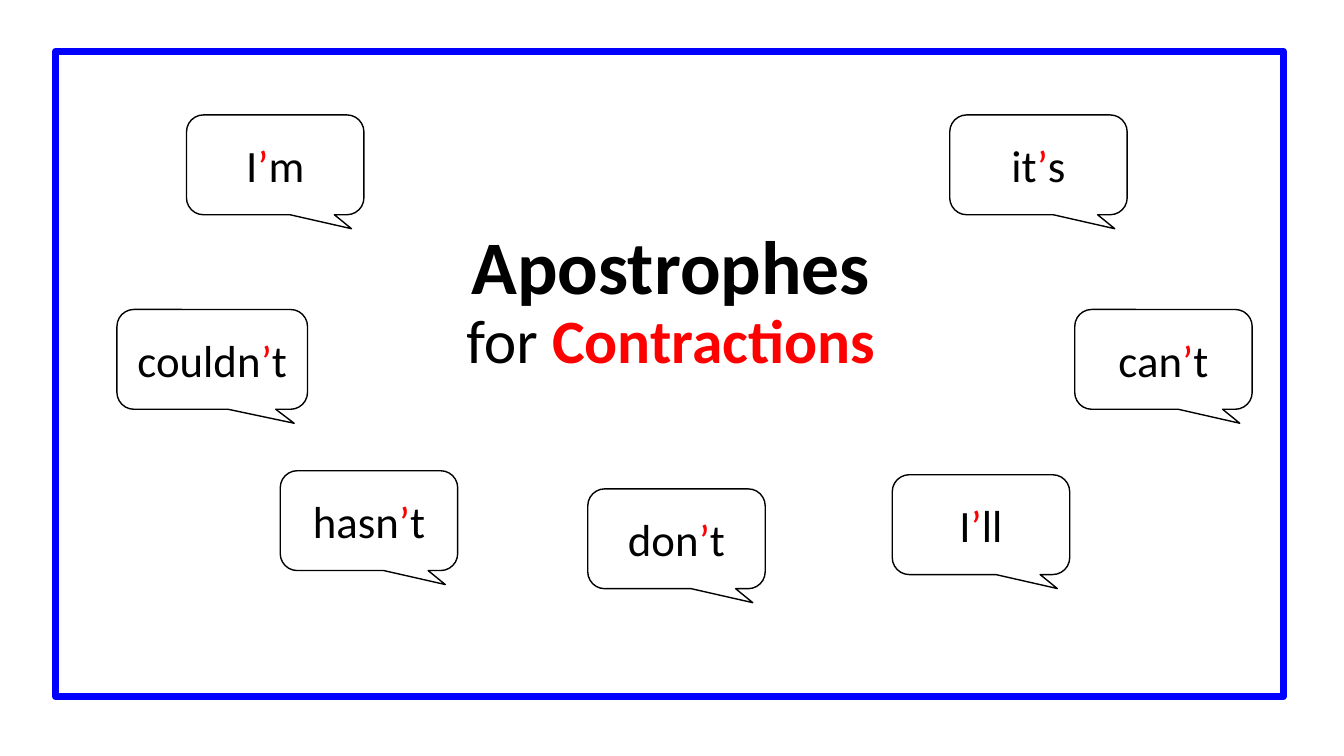
from pptx import Presentation
from pptx.dml.color import RGBColor
from pptx.enum.shapes import MSO_SHAPE
from pptx.enum.text import MSO_ANCHOR, MSO_AUTO_SIZE, PP_ALIGN
from pptx.util import Emu, Pt

PX = 9144
FONT = "Calibri"
COLORS = {"text": "000000", "accent": "FF0000", "frame": "0000FF"}
RECT = MSO_SHAPE.RECTANGLE
BUBBLE = MSO_SHAPE.ROUNDED_RECTANGULAR_CALLOUT
CENTER = PP_ALIGN.CENTER
MIDDLE = MSO_ANCHOR.MIDDLE
BOTTOM = MSO_ANCHOR.BOTTOM
NO_AUTOFIT = MSO_AUTO_SIZE.NONE

BUBBLE_W, BUBBLE_H = 176, 99
BUBBLE_ADJUSTMENTS = (0.43, 0.64, 0.17)
CONTRACTIONS = [
    ("it’s", 942, 114, BUBBLE_W),
    ("can’t", 1066, 307, BUBBLE_W),
    ("I’ll", 885, 471, BUBBLE_W),
    ("don’t", 583, 485, BUBBLE_W),
    ("hasn’t", 278, 467, BUBBLE_W),
    ("couldn’t", 116, 307, 189),
    ("I’m", 185, 114, BUBBLE_W),
]


def px(n):
    return Emu(n * PX)


def rgb(name):
    return RGBColor.from_string(COLORS[name])


def add_text(p, text, size, color="text", bold=False):
    r = p.add_run()
    r.text = text
    r.font.name = FONT
    r.font.size = Pt(size)
    r.font.bold = bold
    r.font.color.rgb = rgb(color)


def add_outline(slide, kind, box, color, weight):
    sp = slide.shapes.add_shape(kind, *map(px, box))
    sp.shadow.inherit = False
    sp.fill.background()
    sp.line.color.rgb = rgb(color)
    sp.line.width = Pt(weight)
    return sp


def add_title(slide, box):
    title = slide.shapes.title
    title.left, title.top, title.width, title.height = map(px, box)
    tf = title.text_frame
    tf.word_wrap = True
    tf.auto_size = NO_AUTOFIT
    tf.vertical_anchor = BOTTOM
    p = tf.paragraphs[0]
    p.alignment = CENTER
    p.line_spacing = 0.9
    add_text(p, "Apostrophes", 54, bold=True)
    p.add_line_break()
    add_text(p, "for ", 44)
    add_text(p, "Contractions", 44, color="accent", bold=True)


def add_bubble(slide, word, box):
    sp = add_outline(slide, BUBBLE, box, "text", 1)
    for i, value in enumerate(BUBBLE_ADJUSTMENTS):
        sp.adjustments[i] = value
    tf = sp.text_frame
    tf.word_wrap = True
    tf.vertical_anchor = MIDDLE
    p = tf.paragraphs[0]
    p.alignment = CENTER
    for part in word.partition("’"):
        add_text(p, part, 32, color="accent" if part == "’" else "text")


def main():
    prs = Presentation()
    prs.slide_width, prs.slide_height = px(1333), px(750)
    slide = prs.slides.add_slide(prs.slide_layouts[5])
    add_title(slide, (416, 210, 499, 169))
    add_outline(slide, RECT, (55, 51, 1218, 640), "frame", 5)
    for word, x, y, w in CONTRACTIONS:
        add_bubble(slide, word, (x, y, w, BUBBLE_H))
    prs.save("out.pptx")


if __name__ == "__main__":
    main()
